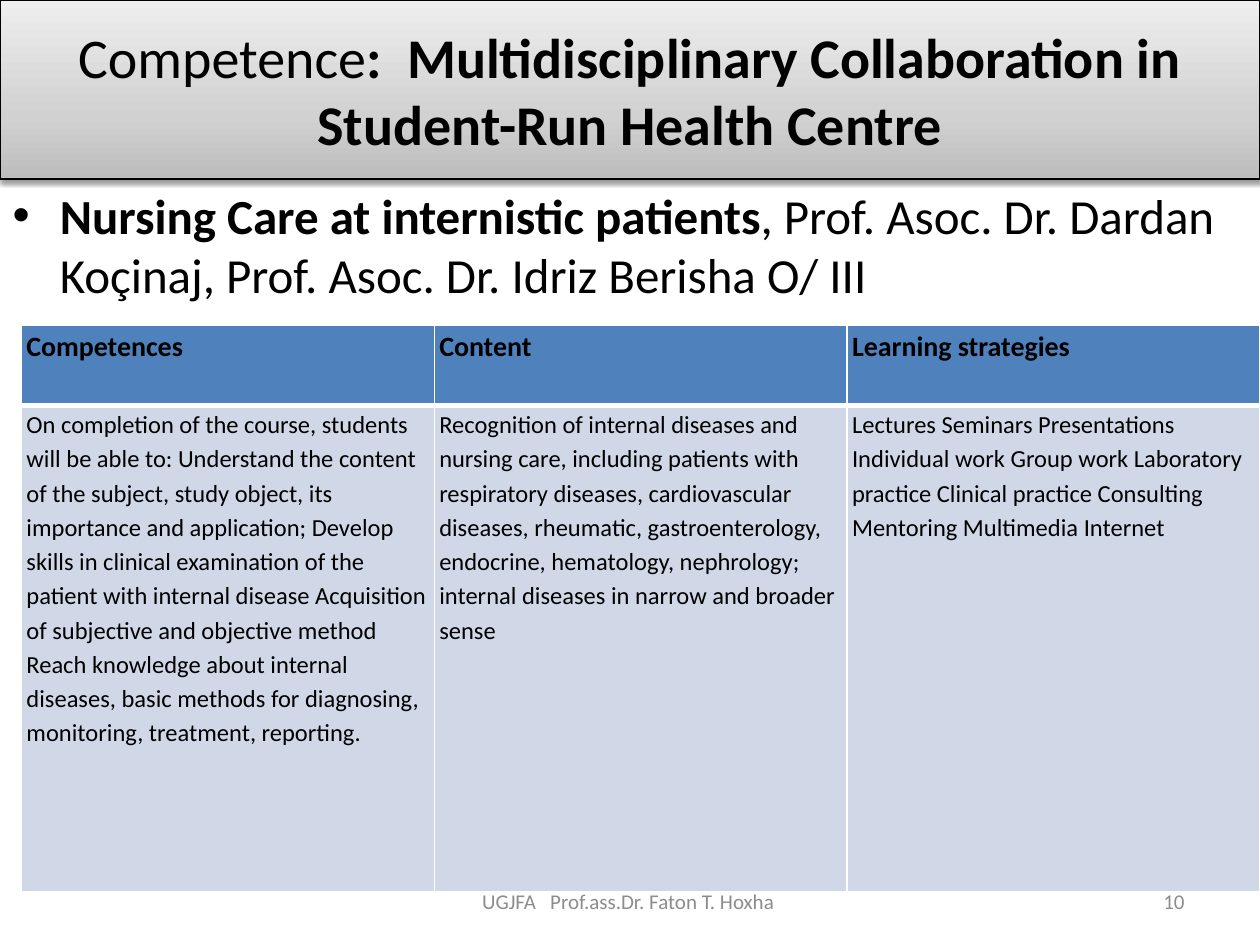
import pptx
import pptx.util
import pptx.oxml
import pptx.oxml.ns
import pptx.dml.color
import pptx.enum.text
from dataclasses import dataclass

Inches = pptx.util.Inches
Pt = pptx.util.Pt
ALIGN = pptx.enum.text.PP_ALIGN
ANCHOR = pptx.enum.text.MSO_ANCHOR
NS = pptx.oxml.ns.nsdecls("a")


@dataclass(frozen=True)
class Theme:
    font: str = "Calibri"
    ink: str = "000000"
    muted: str = "8C8C8C"
    header: str = "4F81BD"
    cell: str = "D0D8E8"
    rule: str = "FFFFFF"
    gradient: tuple = ((0, "BDBDBD"), (35, "D1D1D1"), (100, "EEEEEE"))
    title: int = 32
    body: int = 28
    heading: int = 16
    text: int = 14
    footer: int = 12


THEME = Theme()

ROWS = [
    ["Competences", "Content", "Learning strategies"],
    [
        "On completion of the course, students will be able to: Understand the content of the "
        "subject, study object, its importance and application; Develop skills in clinical "
        "examination of the patient with internal disease Acquisition of subjective and objective "
        "method Reach knowledge about internal diseases, basic methods for diagnosing, monitoring, "
        "treatment, reporting.",
        "Recognition of internal diseases and nursing care, including patients with respiratory "
        "diseases, cardiovascular diseases, rheumatic, gastroenterology, endocrine, hematology, "
        "nephrology; internal diseases in narrow and broader sense",
        "Lectures Seminars Presentations Individual work Group work Laboratory practice Clinical "
        "practice Consulting Mentoring Multimedia Internet",
    ],
]


def rgb(value):
    return pptx.dml.color.RGBColor.from_string(value)


def place(sp, box):
    sp.left, sp.top, sp.width, sp.height = (Inches(v) for v in box)


def style_run(r, size, bold=False, color=THEME.ink):
    r.font.name = THEME.font
    r.font.size = Pt(size)
    r.font.bold = bold
    r.font.color.rgb = rgb(color)


def add_runs(p, parts, size):
    for text, bold in parts:
        r = p.add_run()
        r.text = text
        style_run(r, size, bold)


def add_title(s, box, parts):
    sp = s.shapes.title
    place(sp, box)
    stops = "".join(
        f'<a:gs pos="{pos * 1000}"><a:srgbClr val="{color}"/></a:gs>'
        for pos, color in THEME.gradient
    )
    sp_pr = sp._element.spPr
    sp_pr.append(pptx.oxml.parse_xml(
        f'<a:gradFill {NS} rotWithShape="1"><a:gsLst>{stops}</a:gsLst>'
        '<a:lin ang="16200000" scaled="0"/></a:gradFill>'
    ))
    sp.line.color.rgb = rgb(THEME.ink)
    sp.line.width = Pt(0.75)
    sp_pr.append(pptx.oxml.parse_xml(
        f'<a:effectLst {NS}><a:outerShdw blurRad="{Pt(3.1)}" dist="{Pt(1.6)}" dir="5400000" '
        f'rotWithShape="0"><a:srgbClr val="{THEME.ink}"><a:alpha val="38000"/></a:srgbClr>'
        '</a:outerShdw></a:effectLst>'
    ))
    tf = sp.text_frame
    tf.auto_size = pptx.enum.text.MSO_AUTO_SIZE.NONE
    tf.vertical_anchor = ANCHOR.MIDDLE
    tf.paragraphs[0].alignment = ALIGN.CENTER
    add_runs(tf.paragraphs[0], parts, THEME.title)


def add_course(s, box, parts):
    sp = s.placeholders[1]
    place(sp, box)
    tf = sp.text_frame
    tf.auto_size = pptx.enum.text.MSO_AUTO_SIZE.NONE
    add_runs(tf.paragraphs[0], parts, THEME.body)


def set_borders(cell, widths):
    tc_pr = cell._tc.get_or_add_tcPr()
    for i, (side, width) in enumerate(widths.items()):
        tc_pr.insert(i, pptx.oxml.parse_xml(
            f'<a:ln{side} {NS} w="{Pt(width)}"><a:solidFill><a:srgbClr val="{THEME.rule}"/>'
            f'</a:solidFill></a:ln{side}>'
        ))


def fill_cell(cell, text, is_header):
    cell.fill.solid()
    cell.fill.fore_color.rgb = rgb(THEME.header if is_header else THEME.cell)
    cell.margin_left = cell.margin_right = Inches(0.04)
    cell.margin_top = cell.margin_bottom = 0
    cell.text_frame.text = text
    p = cell.text_frame.paragraphs[0]
    p.line_spacing = 1.15
    style_run(p.runs[0], THEME.heading if is_header else THEME.text, is_header)
    set_borders(cell, {"L": 1, "R": 1, "T": 1 if is_header else 3, "B": 3 if is_header else 1})


def add_competence_table(s, box, rows, header_height):
    left, top, width, height = box
    columns = len(rows[0])
    table = s.shapes.add_table(len(rows), columns, *(Inches(v) for v in box)).table
    for col in table.columns:
        col.width = Inches(width / columns)
    table.rows[0].height = Inches(header_height)
    table.rows[1].height = Inches(height - header_height)
    for i, row in enumerate(rows):
        for j, text in enumerate(row):
            fill_cell(table.cell(i, j), text, i == 0)


def add_footer_text(s, box, text, alignment):
    tf = s.shapes.add_textbox(*(Inches(v) for v in box)).text_frame
    tf.word_wrap = True
    tf.vertical_anchor = ANCHOR.MIDDLE
    tf.text = text
    p = tf.paragraphs[0]
    p.alignment = alignment
    style_run(p.runs[0], THEME.footer, color=THEME.muted)


def main():
    prs = pptx.Presentation()
    prs.slide_width, prs.slide_height = Inches(10), Inches(7.5)
    s = prs.slides.add_slide(prs.slide_layouts[1])
    add_title(s, (0, 0, 10, 1.42), [
        ("Competence", False),
        (":  Multidisciplinary Collaboration in Student-Run Health Centre", True),
    ])
    add_competence_table(s, (0.17, 2.58, 9.83, 4.5), ROWS, 0.64)
    add_course(s, (0, 1.42, 10, 1), [
        ("Nursing Care at internistic patients", True),
        (", Prof. Asoc. Dr. Dardan Koçinaj, Prof. Asoc. Dr. Idriz Berisha O/ III", False),
    ])
    add_footer_text(s, (7.17, 6.95, 2.33, 0.4), "10", ALIGN.RIGHT)
    add_footer_text(s, (3.42, 6.95, 3.17, 0.4), "UGJFA   Prof.ass.Dr. Faton T. Hoxha ", ALIGN.CENTER)
    prs.save("out.pptx")


if __name__ == "__main__":
    main()
